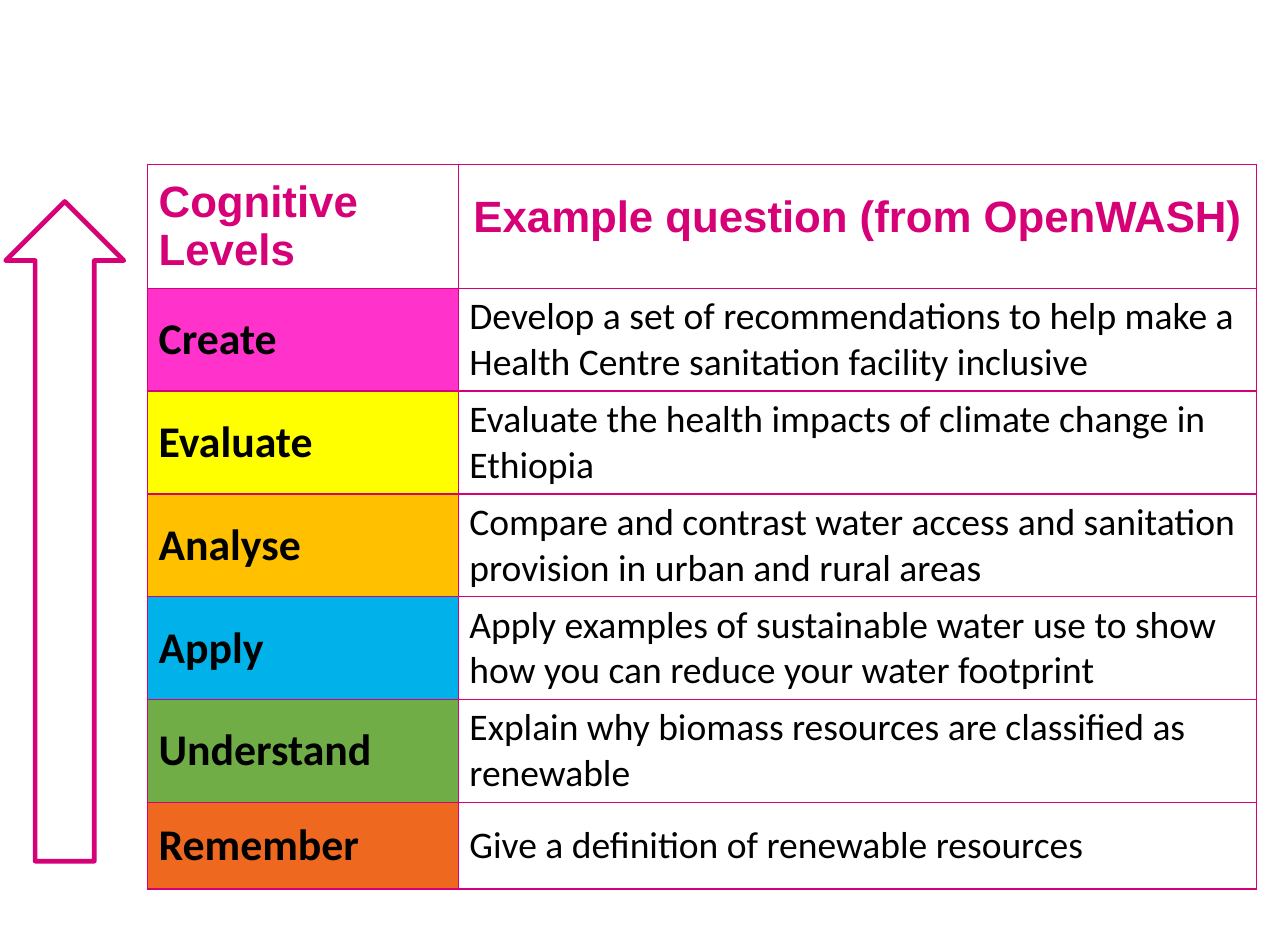
from lxml import etree
from pptx import Presentation
from pptx.dml.color import RGBColor
from pptx.enum.shapes import MSO_SHAPE
from pptx.enum.text import MSO_ANCHOR, PP_ALIGN
from pptx.oxml.ns import qn
from pptx.util import Inches, Pt

LEFT, CENTER = PP_ALIGN.LEFT, PP_ALIGN.CENTER
MIDDLE = MSO_ANCHOR.MIDDLE
ARROW = MSO_SHAPE.UP_ARROW

PINK = RGBColor(0xD6, 0x00, 0x77)
BLACK = RGBColor(0, 0, 0)
WHITE = RGBColor(0xFF, 0xFF, 0xFF)
MAGENTA = RGBColor(0xFF, 0x33, 0xCC)
YELLOW = RGBColor(0xFF, 0xFF, 0x00)
AMBER = RGBColor(0xFF, 0xC0, 0x00)
BLUE = RGBColor(0x00, 0xB1, 0xEA)
GREEN = RGBColor(0x70, 0xAD, 0x47)
ORANGE = RGBColor(0xEF, 0x68, 0x20)

# Content
HEADS = ("Cognitive Levels", "Example question (from OpenWASH)")
LEVELS = [
    ("Create", MAGENTA, "Develop a set of recommendations to help make a "
     "Health Centre sanitation facility inclusive"),
    ("Evaluate", YELLOW,
     "Evaluate the health impacts of climate change in Ethiopia"),
    ("Analyse", AMBER, "Compare and contrast water access and sanitation "
     "provision in urban and rural areas"),
    ("Apply", BLUE, "Apply examples of sustainable water use to show "
     "how you can reduce your water footprint"),
    ("Understand", GREEN,
     "Explain why biomass resources are classified as renewable"),
    ("Remember", ORANGE, "Give a definition of renewable resources"),
]
WIDTHS = (2.76, 7.09)
HEIGHTS = [1.1] + [0.91] * (len(LEVELS) - 1) + [0.77]


def edge(cell):
    """Draw a thin pink line on all four sides of a cell."""
    props = cell._tc.get_or_add_tcPr()
    for side in ("lnL", "lnR", "lnT", "lnB"):
        line = etree.SubElement(props, qn("a:" + side), w=str(Pt(1)))
        paint = etree.SubElement(line, qn("a:solidFill"))
        etree.SubElement(paint, qn("a:srgbClr"), val=str(PINK))


def write(cell, text, fill=WHITE, size=28, bold=True, font="Calibri",
          color=BLACK, align=LEFT, before=0, after=6, pitch=None):
    edge(cell)
    cell.fill.solid()
    cell.fill.fore_color.rgb = fill
    cell.vertical_anchor = MIDDLE
    para = cell.text_frame.paragraphs[0]
    para.alignment = align
    para.space_before, para.space_after = Pt(before), Pt(after)
    if pitch:
        para.line_spacing = Pt(pitch)
    run = para.add_run()
    run.text = text
    run.font.name, run.font.size, run.font.bold = font, Pt(size), bold
    run.font.color.rgb = color


def main():
    deck = Presentation()
    deck.slide_width, deck.slide_height = Inches(11.44), Inches(8.27)
    slide = deck.slides.add_slide(deck.slide_layouts[6])

    # Table of levels
    table = slide.shapes.add_table(
        len(HEIGHTS), len(WIDTHS), Inches(1.31), Inches(1.46),
        Inches(sum(WIDTHS)), Inches(sum(HEIGHTS))).table
    table.first_row = table.horz_banding = False
    for col, width in zip(table.columns, WIDTHS):
        col.width = Inches(width)
    for row, height in zip(table.rows, HEIGHTS):
        row.height = Inches(height)

    head = dict(font="Arial", color=PINK, after=6.2)
    write(table.cell(0, 0), HEADS[0], **head)
    write(table.cell(0, 1), HEADS[1], align=CENTER, pitch=19.3, **head)
    for row, (level, fill, task) in enumerate(LEVELS, 1):
        write(table.cell(row, 0), level, fill=fill)
        write(table.cell(row, 1), task, size=24, bold=False, after=5.2)

    # Rising arrow
    arrow = slide.shapes.add_shape(
        ARROW, Inches(0.05), Inches(1.79), Inches(1.05), Inches(5.86))
    arrow.shadow.inherit = False
    arrow.fill.background()
    arrow.line.color.rgb = PINK
    arrow.line.width = Pt(3)

    deck.save("out.pptx")


if __name__ == "__main__":
    main()
